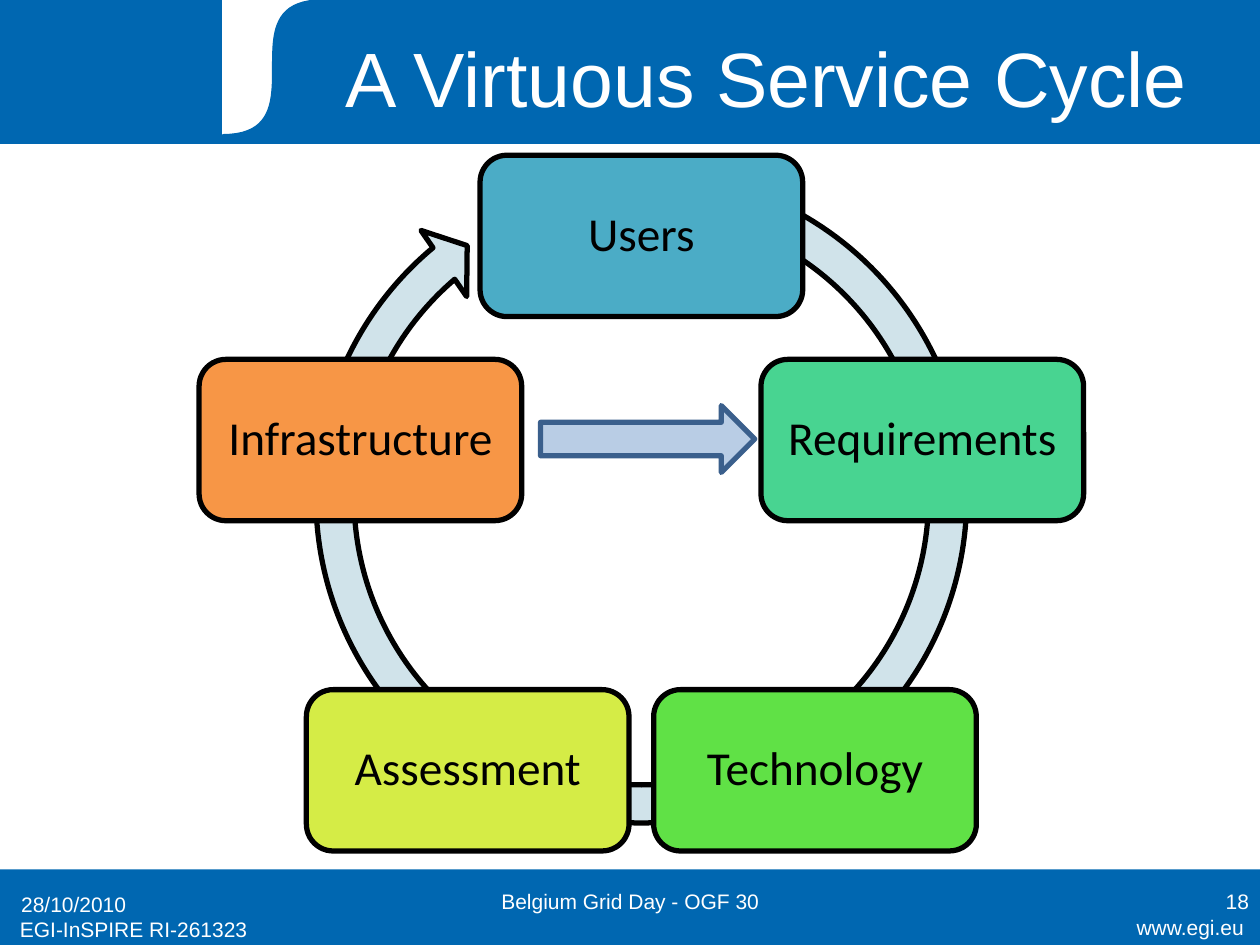
from math import cos, radians, sin

from pptx import Presentation
from pptx.dml.color import RGBColor
from pptx.enum.shapes import MSO_SHAPE as Kind
from pptx.enum.text import MSO_ANCHOR as Anchor, PP_ALIGN as Align
from pptx.util import Pt

WIDE, HIGH = 720, 540
BLUE = RGBColor(0x00, 0x67, 0xB1)
WHITE = RGBColor(0xFF, 0xFF, 0xFF)
BLACK = RGBColor(0x00, 0x00, 0x00)
RING = RGBColor(0xD0, 0xE3, 0xEA)
PALE = RGBColor(0xB9, 0xCD, 0xE5)
NAVY = RGBColor(0x3A, 0x5F, 0x8C)
# Stages, clockwise from the top
STAGES = [
    ("Users", RGBColor(0x4B, 0xAC, 0xC6)),
    ("Requirements", RGBColor(0x48, 0xD4, 0x91)),
    ("Technology", RGBColor(0x60, 0xE1, 0x46)),
    ("Assessment", RGBColor(0xD5, 0xEC, 0x46)),
    ("Infrastructure", RGBColor(0xF7, 0x96, 0x46)),
]


def paint(shape, fill, line=None, width=0.75):
    shape.shadow.inherit = False
    shape.fill.solid()
    shape.fill.fore_color.rgb = fill
    if line is None:
        shape.line.fill.background()
    else:
        shape.line.color.rgb = line
        shape.line.width = Pt(width)


def add_shape(slide, kind, box, fill, line=None, width=0.75):
    shape = slide.shapes.add_shape(kind, *[Pt(v) for v in box])
    paint(shape, fill, line, width)
    return shape


def write(shape, text, size, color, font="Arial", align=Align.CENTER):
    frame = shape.text_frame
    frame.word_wrap = True
    frame.vertical_anchor = Anchor.MIDDLE
    frame.text = text
    para = frame.paragraphs[0]
    para.alignment = align
    face = para.runs[0].font
    face.name, face.size, face.color.rgb = font, Pt(size), color
    return para


def add_text(slide, box, text, size, align):
    shape = slide.shapes.add_textbox(*[Pt(v) for v in box])
    write(shape, text, size, WHITE, align=align)


def add_header(slide, box):
    left, top, wide, high = box
    add_shape(slide, Kind.RECTANGLE, box, BLUE, BLUE)
    # White panel with a blue S-shaped edge over it
    start, end, base = left + 127.4, left + 269.3, top + 77
    bend = start + 56.9
    add_shape(slide, Kind.RECTANGLE, (start, top, end - start, base - top),
              WHITE, WHITE)
    points = [(Pt(end), Pt(base)), (Pt(start), Pt(base))]
    for step in range(1, 41):
        t = step / 40
        ease = 3 * t * (1 - t) ** 2 + t ** 3
        rise = 3 * t ** 2 * (1 - t) + t ** 3
        points.append((Pt(start + (bend - start) * ease),
                       Pt(base + (top - base) * rise)))
    edge = slide.shapes.build_freeform(Pt(end), Pt(top))
    edge.add_line_segments(points, close=True)
    paint(edge.convert_to_shape(), BLUE, BLUE)
    # Title
    add_text(slide, (left + 156.2, top + 9.4, wide - 156.2, 68.4),
             "A Virtuous Service Cycle", 44, Align.CENTER)


def add_footer(slide, box):
    left, top, wide, high = box
    add_shape(slide, Kind.RECTANGLE, box, BLUE)
    right = left + wide
    notes = [
        (left + 5, 5.3, 168, 28.8, "28/10/2010", Align.LEFT),
        (left + 4.3, 23.2, 180, 22.3, "EGI-InSPIRE RI-261323", Align.LEFT),
        (left + 246.2, 3.6, 228, 28.8, "Belgium Grid Day - OGF 30",
         Align.CENTER),
        (right - 167.2, 3.6, 168, 28.8, "18", Align.RIGHT),
        (right - 115.9, 21.7, 113.8, 22.3, "www.egi.eu", Align.RIGHT),
    ]
    for x, drop, w, h, text, align in notes:
        add_text(slide, (x, top + drop, w, h), text, 12, align)


def add_cycle(slide, box):
    left, top, wide, high = box
    # Ring with arrowhead
    ring = add_shape(slide, Kind.CIRCULAR_ARROW, box, RING, BLACK, 3)
    for i, value in enumerate((0.055, 3.307, 137.914, 173.765, 0.058)):
        ring.adjustments[i] = value
    # Stages on a regular pentagon
    mid, hub, radius = left + wide / 2, top + 217.2, 168.8
    w, h = 184.4, 92.2
    for i, (name, color) in enumerate(STAGES):
        angle = radians(360 / len(STAGES) * i)
        x = mid + radius * sin(angle) - w / 2
        y = hub - radius * cos(angle) - h / 2
        stage = add_shape(slide, Kind.ROUNDED_RECTANGLE, (x, y, w, h),
                          color, BLACK, 3)
        frame = stage.text_frame
        frame.margin_left = frame.margin_right = Pt(4)
        frame.margin_top = frame.margin_bottom = Pt(8)
        para = write(stage, name, 27, BLACK, "Calibri")
        para.line_spacing = 0.9
    # Shortcut from Infrastructure to Requirements
    add_shape(slide, Kind.RIGHT_ARROW,
              (left + 140.4, top + 145.4, 122.4, 38.2), PALE, NAVY, 3)


def main():
    deck = Presentation()
    deck.slide_width, deck.slide_height = Pt(WIDE), Pt(HIGH)
    slide = deck.slides.add_slide(deck.slide_layouts[6])
    add_footer(slide, (0, 496.8, WIDE, 43.2))
    add_header(slide, (0, 0, WIDE, 82.1))
    add_cycle(slide, (168.5, 86.4, 396, 396))
    deck.save("out.pptx")


if __name__ == "__main__":
    main()
